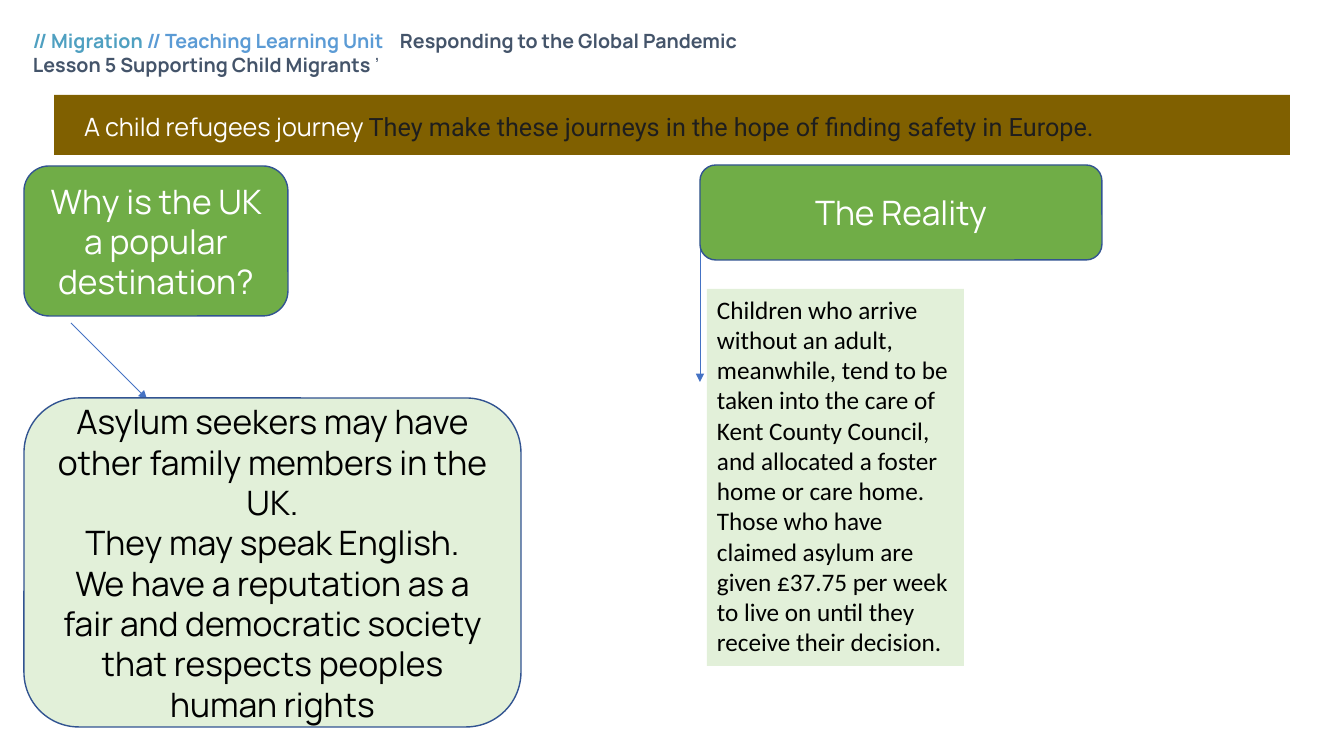
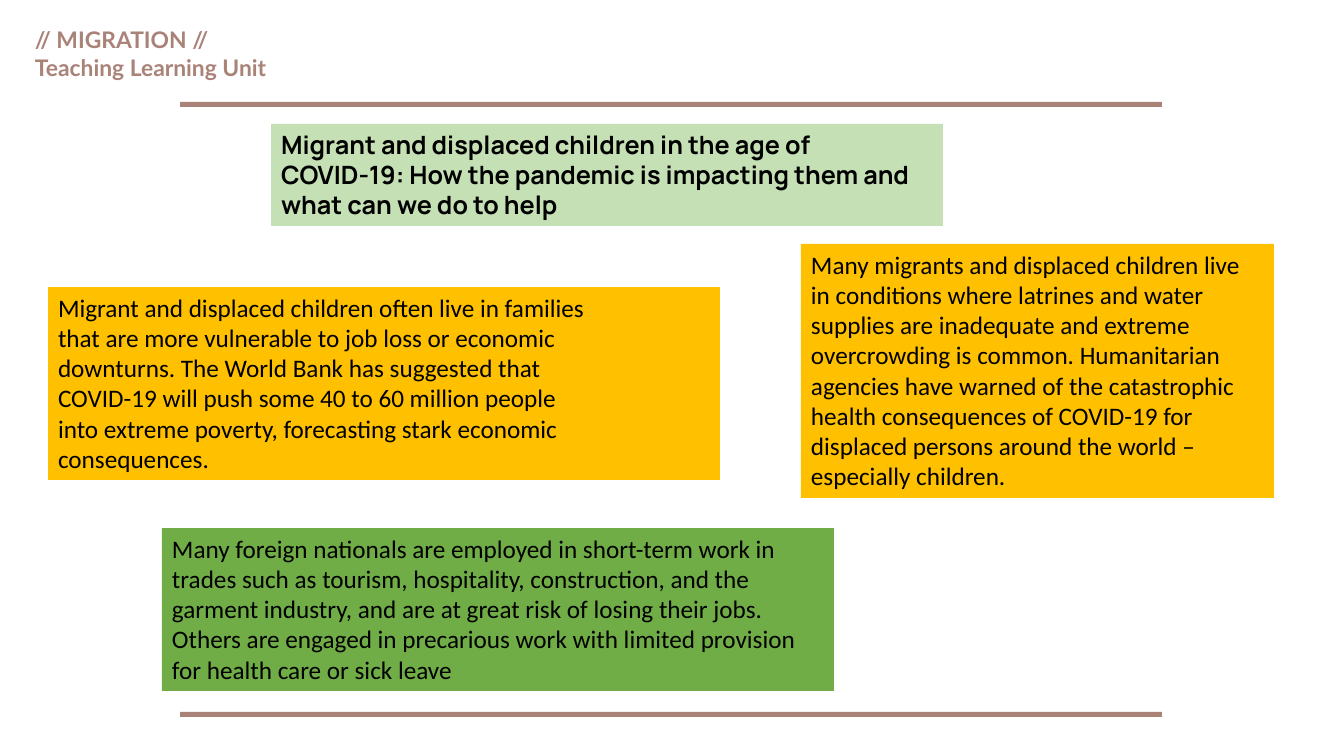
from dataclasses import dataclass, replace

from lxml.etree import SubElement
from pptx import Presentation
from pptx.dml.color import RGBColor
from pptx.enum.shapes import MSO_CONNECTOR, MSO_SHAPE
from pptx.enum.text import MSO_ANCHOR, PP_ALIGN
from pptx.oxml.ns import qn
from pptx.util import Emu, Pt

EMU_PER_PX = 914400 / 100.8
WIDTH, HEIGHT = 1344, 756

BLACK, WHITE, INK = "000000", "FFFFFF", "1E1E1E"
TEAL, SKY, SLATE = "4FA0C1", "5B9BD5", "44546A"
GREEN, PALE_GREEN, SOFT_GREEN = "70AD47", "E2F0D9", "C5E0B4"
AMBER, BROWN, ROSE = "FFC000", "806000", "A98278"
OUTLINE, ARROW = "325491", "4472C4"


@dataclass(frozen=True)
class TextStyle:
    font: str
    size: float
    color: str = BLACK
    bold: bool = False


BODY = TextStyle("Calibri", 18)
TITLE = TextStyle("Manrope", 18, bold=True)
BAND = TextStyle("Manrope", 18, WHITE)
BUBBLE = TextStyle("Manrope", 24)
HEADING = replace(BUBBLE, color=WHITE)
UNIT = TextStyle("Manrope", 14, SLATE, True)
UNIT_ROSE = TextStyle("Lato", 16.3, ROSE, True)


def px(n):
    return Emu(round(n * EMU_PER_PX))


def rgb(hex_color):
    return RGBColor.from_string(hex_color)


class Deck:
    def __init__(self):
        self.prs = Presentation()
        self.prs.slide_width, self.prs.slide_height = px(WIDTH), px(HEIGHT)
        self.s = None

    def new_slide(self):
        self.s = self.prs.slides.add_slide(self.prs.slide_layouts[6])

    def set_text(self, sp, paragraphs, insets=(10, 5, 10, 5),
                 align=PP_ALIGN.LEFT, anchor=MSO_ANCHOR.TOP, tab=None):
        """Fill sp with paragraphs, each a list of (text, style) runs."""
        tf = sp.text_frame
        tf.word_wrap = True
        tf.vertical_anchor = anchor
        (tf.margin_left, tf.margin_top,
         tf.margin_right, tf.margin_bottom) = map(px, insets)
        for i, runs in enumerate(paragraphs):
            p = tf.add_paragraph() if i else tf.paragraphs[0]
            p.alignment = align
            if tab and any("\t" in text for text, _ in runs):
                tabs = SubElement(p._p.get_or_add_pPr(), qn("a:tabLst"))
                SubElement(tabs, qn("a:tab"), pos=str(px(tab)), algn="l")
            for text, style in runs:
                r = p.add_run()
                r.text = text
                r.font.name = style.font
                r.font.size = Pt(style.size)
                r.font.bold = style.bold
                r.font.color.rgb = rgb(style.color)

    def shape(self, kind, box, fill, outline=None):
        sp = self.s.shapes.add_shape(kind, *map(px, box))
        sp.shadow.inherit = False
        sp.fill.solid()
        sp.fill.fore_color.rgb = rgb(fill)
        if outline:
            sp.line.color.rgb = rgb(outline)
            sp.line.width = Pt(1)
        else:
            sp.line.fill.background()
        return sp

    def header(self, box, paragraphs, tab=None):
        sp = self.s.shapes.add_textbox(*map(px, box))
        self.set_text(sp, paragraphs, insets=(9, 9, 9, 9), tab=tab)

    def band(self, box, runs):
        sp = self.shape(MSO_SHAPE.RECTANGLE, box, BROWN)
        self.set_text(sp, [runs], insets=(30, 8, 10, 5),
                      anchor=MSO_ANCHOR.MIDDLE)

    def rule(self, top):
        self.shape(MSO_SHAPE.RECTANGLE, (180, top, 982, 5), ROSE)

    def panel(self, box, fill, lines, style=BODY):
        sp = self.shape(MSO_SHAPE.RECTANGLE, box, fill)
        self.set_text(sp, [[(line, style)] for line in lines])

    def bubble(self, box, fill, lines, style):
        sp = self.shape(MSO_SHAPE.ROUNDED_RECTANGLE, box, fill, OUTLINE)
        self.set_text(sp, [[(line, style)] for line in lines],
                      align=PP_ALIGN.CENTER, anchor=MSO_ANCHOR.MIDDLE)

    def arrow(self, x1, y1, x2, y2):
        connector = self.s.shapes.add_connector(
            MSO_CONNECTOR.STRAIGHT, *map(px, (x1, y1, x2, y2)))
        connector.line.color.rgb = rgb(ARROW)
        connector.line.width = Pt(0.5)
        props = connector._element.spPr
        SubElement(props.find(qn("a:ln")), qn("a:tailEnd"), type="triangle")
        SubElement(props, qn("a:effectLst"))


def journey_slide(deck):
    deck.new_slide()
    deck.header((24, 20, 950, 65), [
        [("// Migration ", replace(UNIT, color=TEAL)),
         ("// Teaching Learning Unit\t", replace(UNIT, color=SKY)),
         ("Responding to the Global Pandemic", UNIT)],
        [("Lesson 5 Supporting Child Migrants ", UNIT),
         ("’", replace(UNIT, bold=False))],
    ], tab=367)
    deck.band((54, 95, 1236, 60), [
        ("A child refugees journey ", BAND),
        ("They make these journeys in the hope of finding safety in Europe.",
         replace(BAND, font="Roboto", color=INK)),
    ])
    deck.bubble((24, 166, 264, 150), GREEN,
                ["Why is the UK a popular destination?"], HEADING)
    deck.arrow(71, 323, 147, 399)
    deck.arrow(700, 241, 700, 382)
    deck.bubble((700, 165, 402, 95), GREEN, ["The Reality"], HEADING)
    deck.bubble((24, 398, 497, 329), PALE_GREEN, [
        "Asylum seekers may have other family members in the UK.",
        "They may speak English.",
        "We have a reputation as a fair and democratic society that respects "
        "peoples human rights",
    ], BUBBLE)
    deck.panel((707, 289, 257, 377), PALE_GREEN, [
        "Children who arrive without an adult, meanwhile, tend to be taken "
        "into the care of Kent County Council, and allocated a foster home "
        "or care home.",
        "Those who have claimed asylum are given £37.75 per week to live on "
        "until they receive their decision.",
    ])


def pandemic_slide(deck):
    deck.new_slide()
    for top in (102, 712):
        deck.rule(top)
    deck.header((26, 17, 434, 65), [
        [("// MIGRATION //", UNIT_ROSE)],
        [("Teaching Learning Unit", UNIT_ROSE)],
    ])
    deck.panel((271, 124, 672, 102), SOFT_GREEN, [
        "Migrant and displaced children in the age of COVID-19: How the "
        "pandemic is impacting them and what can we do to help",
    ], TITLE)
    deck.panel((48, 287, 672, 193), AMBER, [
        "Migrant and displaced children often live in families",
        "that are more vulnerable to job loss or economic",
        "downturns. The World Bank has suggested that",
        "COVID-19 will push some 40 to 60 million people",
        "into extreme poverty, forecasting stark economic",
        "consequences.",
    ])
    deck.panel((162, 528, 672, 163), GREEN, [
        "Many foreign nationals are employed in short-term work in trades "
        "such as tourism, hospitality, construction, and the garment "
        "industry, and are at great risk of losing their jobs. Others are "
        "engaged in precarious work with limited provision for health care "
        "or sick leave",
    ])
    deck.panel((801, 244, 473, 254), AMBER, [
        "Many migrants and displaced children live in conditions where "
        "latrines and water supplies are inadequate and extreme overcrowding "
        "is common. Humanitarian agencies have warned of the catastrophic "
        "health consequences of COVID-19 for displaced persons around the "
        "world – especially children.",
    ])


def main():
    deck = Deck()
    journey_slide(deck)
    pandemic_slide(deck)
    deck.prs.save("out.pptx")


if __name__ == "__main__":
    main()
